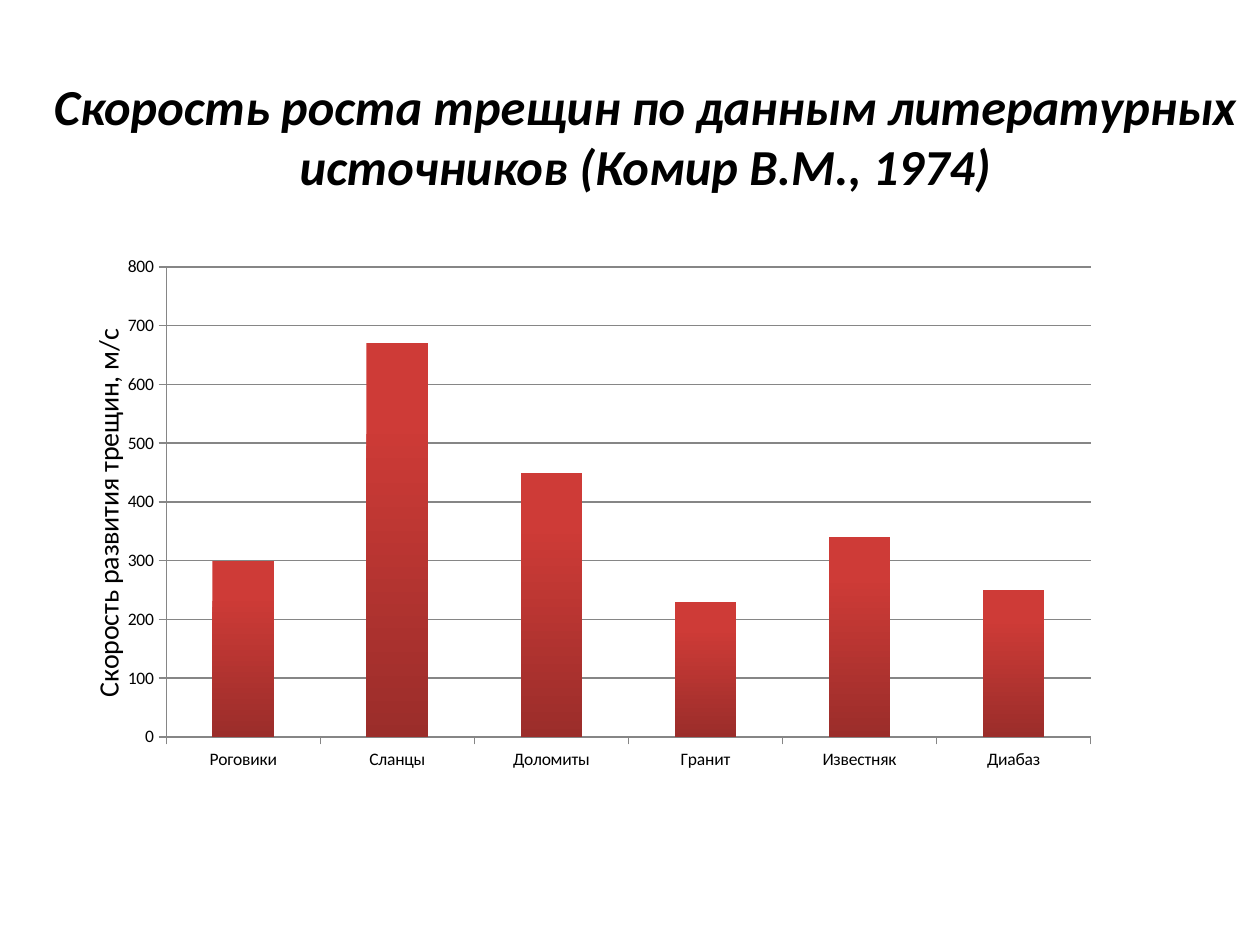
from dataclasses import dataclass

from lxml.etree import SubElement
from pptx import Presentation
from pptx.chart.data import CategoryChartData
from pptx.dml.color import RGBColor
from pptx.enum.chart import XL_CHART_TYPE as ChartType, XL_TICK_MARK as Tick
from pptx.enum.text import MSO_ANCHOR as Anchor, PP_ALIGN as Align
from pptx.oxml.ns import qn
from pptx.util import Pt

PX = 914400 / 126


@dataclass(frozen=True)
class Theme:
    font: str = "Calibri"
    text: RGBColor = RGBColor(0, 0, 0)
    line: RGBColor = RGBColor(0x86, 0x86, 0x86)
    bar_top: RGBColor = RGBColor(0xCE, 0x3B, 0x37)
    bar_bottom: RGBColor = RGBColor(0x9B, 0x2D, 0x2A)
    title_size: float = 28.8
    axis_title_size: int = 16
    label_size: int = 10


theme = Theme()


def px(*lengths):
    return [round(length * PX) for length in lengths]


def style(font, size, bold=False, italic=False):
    font.name, font.size = theme.font, Pt(size)
    font.bold, font.italic = bold, italic
    font.color.rgb = theme.text


prs = Presentation()
prs.slide_width, prs.slide_height = px(1260, 945)
slide = prs.slides.add_slide(prs.slide_layouts[6])

# Heading
heading = slide.shapes.add_textbox(*px(31, 66, 1229, 139)).text_frame
heading.word_wrap = True
heading.vertical_anchor = Anchor.MIDDLE
heading.text = "Скорость роста трещин по данным литературных источников (Комир В.М., 1974)"
heading.paragraphs[0].alignment = Align.CENTER
style(heading.paragraphs[0].runs[0].font, theme.title_size, bold=True, italic=True)

# Crack growth speed by rock
speeds = {
    "Роговики": 300,
    "Сланцы": 670,
    "Доломиты": 450,
    "Гранит": 230,
    "Известняк": 340,
    "Диабаз": 250,
}
speed_data = CategoryChartData()
speed_data.categories = list(speeds)
speed_data.add_series("Series 1", list(speeds.values()))
chart = slide.shapes.add_chart(
    ChartType.COLUMN_CLUSTERED, *px(84, 244, 1126, 546), speed_data
).chart
chart.has_title = False
chart.has_legend = False
style(chart.font, theme.label_size)

bars = chart.plots[0]
bars.gap_width = 150
bars.vary_by_categories = False
bar_fill = bars.series[0].format.fill
bar_fill.gradient()
bar_fill.gradient_angle = 270
top_stop, bottom_stop = bar_fill.gradient_stops
top_stop.color.rgb, top_stop.position = theme.bar_top, 0.2
bottom_stop.color.rgb, bottom_stop.position = theme.bar_bottom, 1

rock_axis, speed_axis = chart.category_axis, chart.value_axis
for axis in (rock_axis, speed_axis):
    axis.major_tick_mark = Tick.OUTSIDE
    axis.minor_tick_mark = Tick.NONE
    axis.format.line.color.rgb = theme.line
    axis.format.line.width = Pt(0.75)
speed_axis.minimum_scale, speed_axis.maximum_scale = 0, 800
speed_axis.major_unit = 100
speed_axis.has_major_gridlines = True
speed_axis.major_gridlines.format.line.color.rgb = theme.line
speed_axis.major_gridlines.format.line.width = Pt(0.75)

speed_title = speed_axis.axis_title.text_frame
speed_title.text = "Скорость развития трещин, м/с"
style(speed_title.paragraphs[0].runs[0].font, theme.axis_title_size)
speed_title._txBody.bodyPr.set("rot", "-5400000")
speed_title._txBody.bodyPr.set("vert", "horz")

# Fixed inner plot area, as fractions of the chart
plot_area = chart._chartSpace.chart.plotArea
for old_layout in plot_area.findall(qn("c:layout")):
    plot_area.remove(old_layout)
layout = SubElement(plot_area, qn("c:layout"))
plot_area.insert(0, layout)
manual = SubElement(layout, qn("c:manualLayout"))
for tag, value in (
    ("layoutTarget", "inner"), ("xMode", "edge"), ("yMode", "edge"),
    ("x", 0.073), ("y", 0.042), ("w", 0.821), ("h", 0.861),
):
    SubElement(manual, qn(f"c:{tag}")).set("val", str(value))

prs.save("out.pptx")
